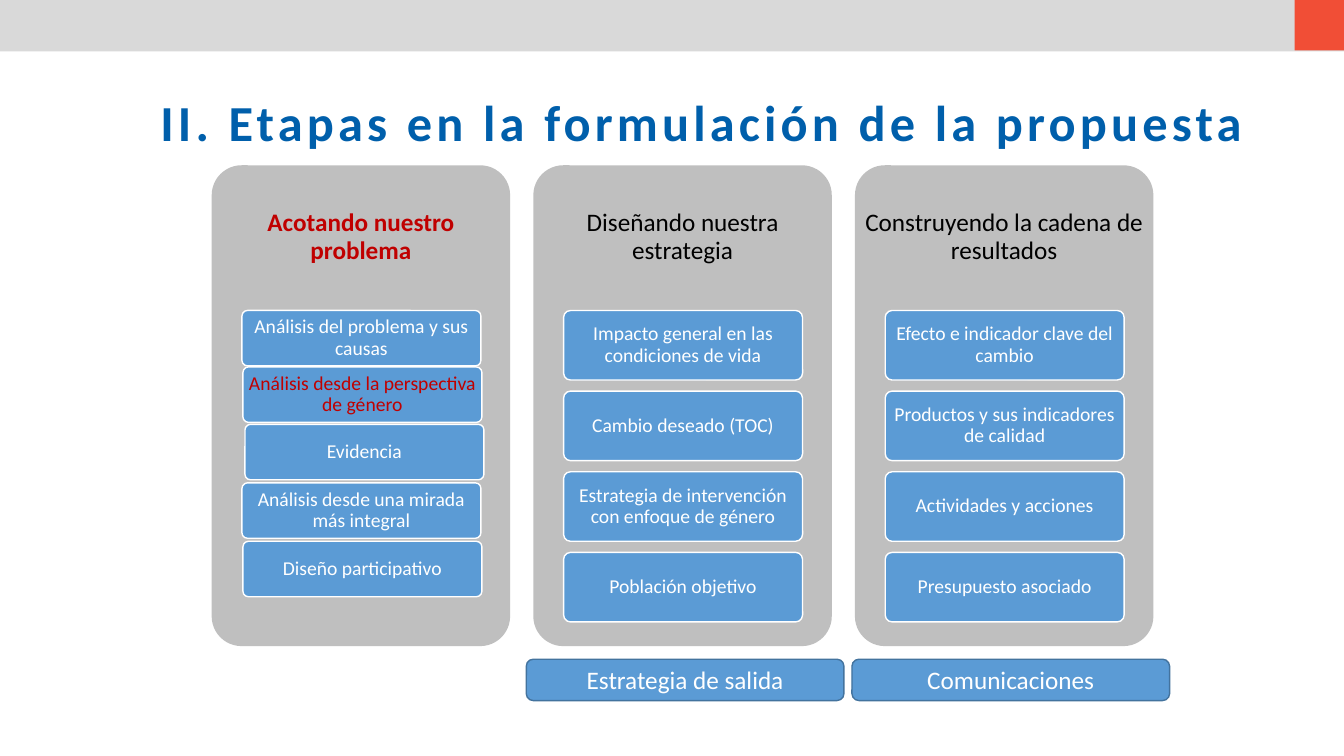
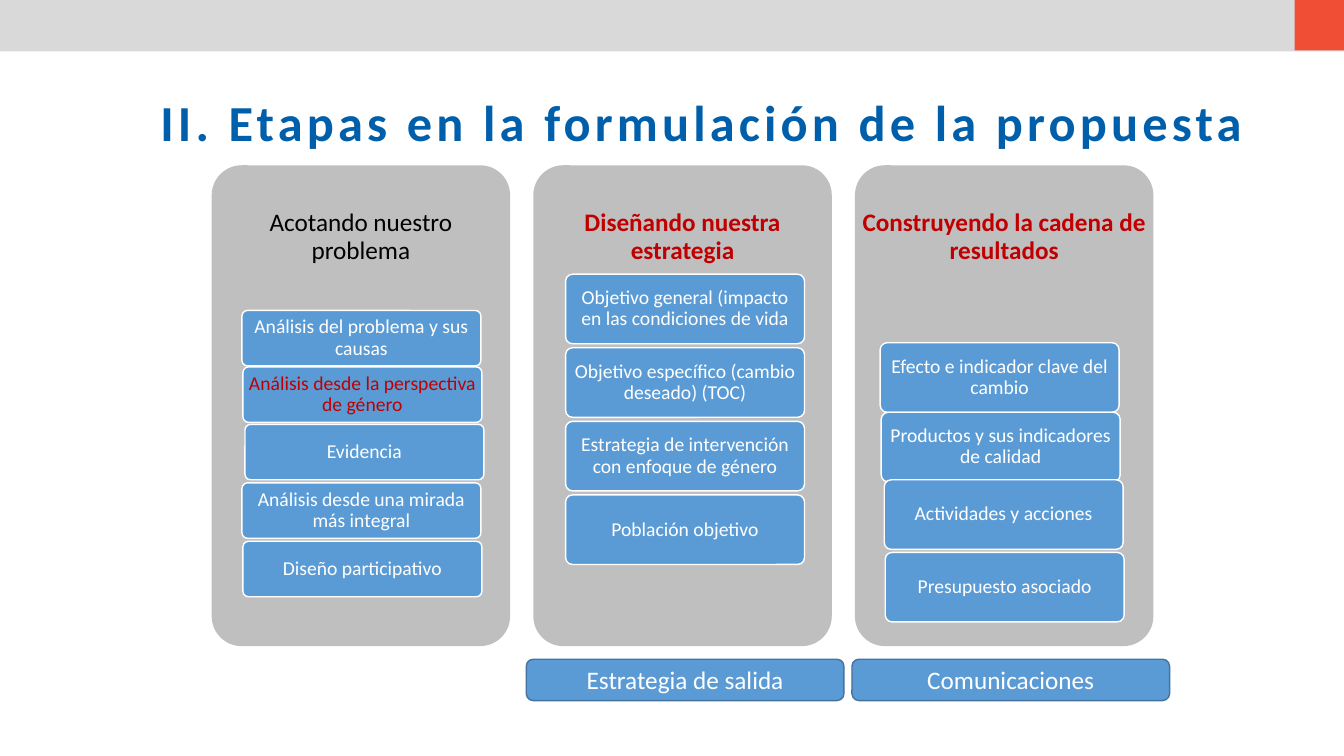
from dataclasses import dataclass

from pptx import Presentation
from pptx.dml.color import RGBColor
from pptx.enum import shapes as es, text as et
from pptx.util import Inches, Pt

INK = {
    "band": "D9D9D9", "mark": "F14E36", "title": "005FAB", "panel": "BFBFBF",
    "card": "5B9BD5", "edge": "43739E", "hot": "C00000", "black": "000000",
    "white": "FFFFFF",
}
FONT = "Calibri"
RECT = es.MSO_SHAPE.RECTANGLE
ROUND = es.MSO_SHAPE.ROUNDED_RECTANGLE
LEFT, STEP, TOP, WIDE, TALL = 2.1, 3.19, 1.64, 2.96, 4.77
Spots = list[tuple[float, float]]


@dataclass
class Card:
    text: str
    ink: str = "white"


@dataclass
class Stage:
    """A column; each spot is a card's offset from the panel and its top."""
    head: str
    cards: list[Card]
    spots: Spots
    high: float = 0.69
    hot: bool = False


def stack(dx: float, top: float, step: float, count: int = 4) -> Spots:
    return [(dx, top + i * step) for i in range(count)]


def write(box, words: str, *, size: float, ink: str, bold: bool = False,
          align=et.PP_ALIGN.CENTER, anchor=et.MSO_ANCHOR.MIDDLE,
          line: float = 0.9, pad=(0.1, 0.05, 0.1, 0.05), track: int = 0) -> None:
    frame = box.text_frame
    frame.word_wrap = True
    frame.vertical_anchor = anchor
    (frame.margin_left, frame.margin_top,
     frame.margin_right, frame.margin_bottom) = map(Inches, pad)
    para = frame.paragraphs[0]
    para.alignment, para.line_spacing = align, line
    run = para.add_run()
    run.text = words
    font = run.font
    font.name, font.size, font.bold = FONT, Pt(size), bold
    font.color.rgb = RGBColor.from_string(INK[ink])
    if track:
        run._r.get_or_add_rPr().set("spc", str(track * 100))


def block(slide, kind, x: float, y: float, w: float, h: float, fill: str,
          edge: str = "", adj: float | None = None):
    shape = slide.shapes.add_shape(kind, *map(Inches, (x, y, w, h)))
    shape.shadow.inherit = False
    shape.fill.solid()
    shape.fill.fore_color.rgb = RGBColor.from_string(INK[fill])
    if edge:
        shape.line.color.rgb = RGBColor.from_string(INK[edge])
        shape.line.width = Pt(1)
    else:
        shape.line.fill.background()
    if adj is not None:
        shape.adjustments[0] = adj
    return shape


def label(slide, x: float, y: float, w: float, h: float, words: str, **form) -> None:
    write(slide.shapes.add_textbox(*map(Inches, (x, y, w, h))), words, **form)


def brand(deck, slide) -> None:
    """Draw the top bands and move them to the slide master."""
    tree = deck.slide_master.shapes._spTree
    for band in (block(slide, RECT, 0, 0, 13.33, 0.51, "band"),
                 block(slide, RECT, 12.84, 0, 0.5, 0.5, "mark")):
        tree.append(band._element)


def column(slide, x: float, stage: Stage) -> None:
    block(slide, ROUND, x, TOP, WIDE, TALL, "panel", adj=0.1)
    label(slide, x, TOP, WIDE, 1.43, stage.head, size=18, bold=stage.hot,
          ink="hot" if stage.hot else "black", pad=(0.07,) * 4)
    for card, (dx, y) in zip(stage.cards, stage.spots):
        box = block(slide, ROUND, x + dx, y, 2.37, stage.high, "card", "white", 0.1)
        write(box, card.text, size=14, ink=card.ink, pad=(0.04, 0.03, 0.04, 0.03))


def fill(slide, stages: list[Stage]) -> None:
    label(slide, 0.49, 0.92, 12.58, 1.79,
          "II. Etapas en la formulación de la propuesta", size=36, ink="title",
          bold=True, align=et.PP_ALIGN.LEFT, anchor=et.MSO_ANCHOR.TOP,
          pad=(1.1, 0.05, 0.1, 0.05), track=3)
    for i, stage in enumerate(stages):
        column(slide, LEFT + i * STEP, stage)
    for x, words in ((5.22, "Estrategia de salida"), (8.45, "Comunicaciones")):
        box = block(slide, ROUND, x, 6.54, 3.15, 0.41, "card", "edge")
        write(box, words, size=18, ink="white", line=1.0)


def scope(hot: bool) -> Stage:
    cards = [Card("Análisis del problema y sus causas"),
             Card("Análisis desde la perspectiva de género", "hot"),
             Card("Evidencia"),
             Card("Análisis desde una mirada más integral"),
             Card("Diseño participativo")]
    spots = [(0.3, 3.08), (0.31, 3.64), (0.33, 4.21), (0.3, 4.79), (0.31, 5.37)]
    return Stage("Acotando nuestro problema", cards, spots, 0.55, hot)


def plan(goals: list[str], spots: Spots, hot: bool) -> Stage:
    names = goals + ["Estrategia de intervención con enfoque de género",
                     "Población objetivo"]
    return Stage("Diseñando nuestra estrategia", [Card(n) for n in names],
                 spots, hot=hot)


def chain(spots: Spots, hot: bool) -> Stage:
    names = ["Efecto e indicador clave del cambio",
             "Productos y sus indicadores de calidad",
             "Actividades y acciones", "Presupuesto asociado"]
    return Stage("Construyendo la cadena de resultados",
                 [Card(n) for n in names], spots, hot=hot)


def main() -> None:
    deck = Presentation()
    deck.slide_width, deck.slide_height = Inches(13.33), Inches(7.5)
    even = stack(0.3, 3.08, 0.8)
    first = [
        scope(True),
        plan(["Impacto general en las condiciones de vida",
              "Cambio deseado (TOC)"], even, False),
        chain(even, False),
    ]
    second = [
        scope(False),
        plan(["Objetivo general (impacto en las condiciones de vida",
              "Objetivo específico (cambio deseado) (TOC)"],
             stack(0.32, 2.72, 0.73), True),
        chain([(0.25, 3.4), (0.26, 4.09), (0.29, 4.76), (0.3, 5.48)], True),
    ]
    slides = [deck.slides.add_slide(deck.slide_layouts[6]) for _ in range(2)]
    brand(deck, slides[0])
    for slide, stages in zip(slides, (first, second)):
        fill(slide, stages)
    deck.save("out.pptx")


if __name__ == "__main__":
    main()
